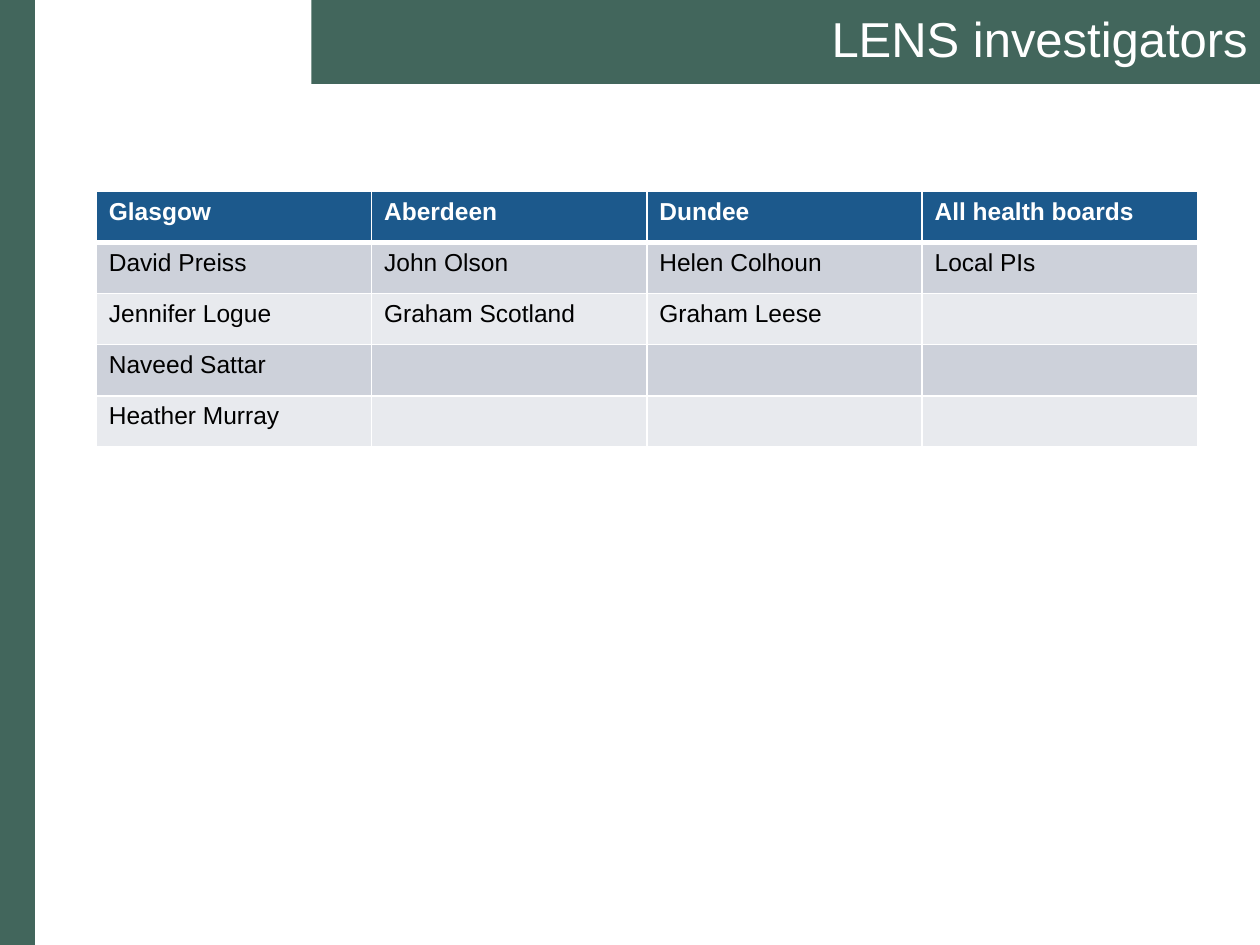
from lxml.etree import SubElement as Sub
from pptx import Presentation
from pptx.dml.color import RGBColor
from pptx.enum.shapes import MSO_SHAPE as Kind
from pptx.enum.text import MSO_ANCHOR as Anchor, PP_ALIGN as Align
from pptx.oxml.ns import qn
from pptx.util import Pt

TITLE = "LENS investigators"
TEAMS = {
    "Glasgow": ["David Preiss", "Jennifer Logue", "Naveed Sattar", "Heather Murray"],
    "Aberdeen": ["John Olson", "Graham Scotland"],
    "Dundee": ["Helen Colhoun", "Graham Leese"],
    "All health boards": ["Local PIs"],
}
GREEN, BLUE, WHITE, BLACK = "42665C", "1C598C", "FFFFFF", "000000"
BANDS = ["CDD1DA", "E8EAEE"]
WIDE, HIGH = 720, 540
LEFT, TOP, COL, ROW = 55, 109.4, 157.3, 29.2


def paint(item, tint):
    item.fill.solid()
    item.fill.fore_color.rgb = RGBColor.from_string(tint)


def style(par, size, tint, bold=False):
    font = par.font
    font.name, font.size, font.bold = "Arial", Pt(size), bold
    font.color.rgb = RGBColor.from_string(tint)


def block(x, y, w, h):
    box = slide.shapes.add_shape(Kind.RECTANGLE, Pt(x), Pt(y), Pt(w), Pt(h))
    box.shadow.inherit = False
    box.line.fill.background()
    paint(box, GREEN)
    return box


def edge(cell, side, width):
    line = Sub(cell._tc.get_or_add_tcPr(), qn(f"a:ln{side}"), w=str(Pt(width)))
    Sub(Sub(line, qn("a:solidFill")), qn("a:srgbClr"), val=WHITE)


deck = Presentation()
deck.slide_width, deck.slide_height = Pt(WIDE), Pt(HIGH)
slide = deck.slides.add_slide(deck.slide_layouts[6])

block(0, 0, 20, HIGH)
head = block(178, 0, WIDE - 178, 48)
frame = head.text_frame
frame.word_wrap = True
frame.vertical_anchor = Anchor.MIDDLE
frame.margin_left, frame.margin_right = Pt(6), Pt(7.2)
frame.margin_top = frame.margin_bottom = Pt(3)
par = frame.paragraphs[0]
par.text = TITLE
par.alignment = Align.RIGHT
par.line_spacing = 0.9
style(par, 28, WHITE)

rows = 1 + max(len(team) for team in TEAMS.values())
cols = len(TEAMS)
table = slide.shapes.add_table(
    rows, cols, Pt(LEFT), Pt(TOP), Pt(COL * cols), Pt(ROW * rows)
).table
for row in table.rows:
    row.height = Pt(ROW)
for c, (place, team) in enumerate(TEAMS.items()):
    table.columns[c].width = Pt(COL)
    words = [place] + team
    for r in range(rows):
        cell = table.cell(r, c)
        for side, width in ("L", 1), ("R", 1), ("T", 3 if r == 1 else 1), ("B", 1 if r else 3):
            edge(cell, side, width)
        paint(cell, BANDS[(r - 1) % 2] if r else BLUE)
        par = cell.text_frame.paragraphs[0]
        if r < len(words):
            par.text = words[r]
        style(par, 14, BLACK if r else WHITE, r == 0)

deck.save("out.pptx")
